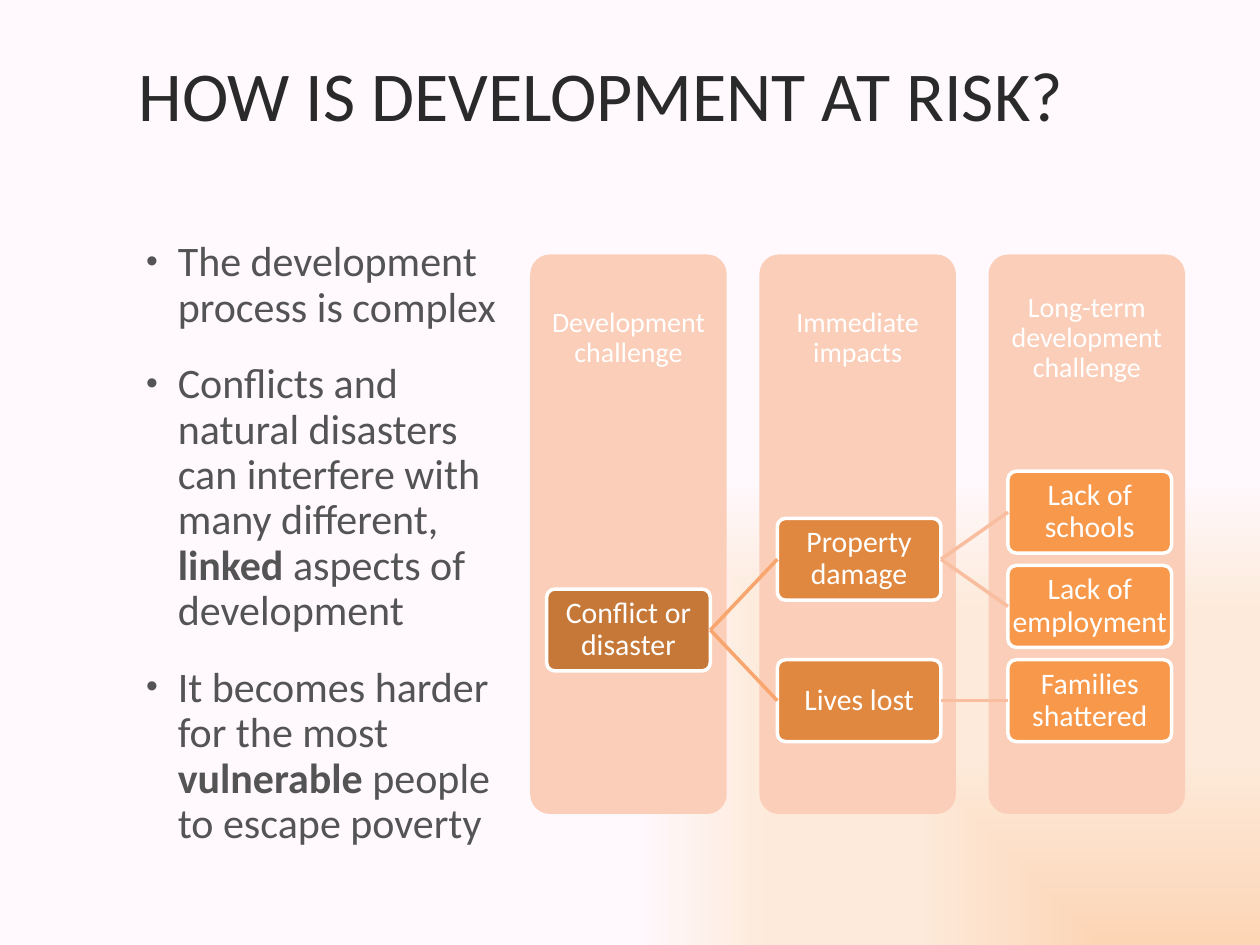
"""Builds the slide on how conflict and disaster put development at risk."""
from dataclasses import dataclass

from pptx import Presentation
from pptx.dml.color import RGBColor
from pptx.enum.shapes import MSO_CONNECTOR, MSO_SHAPE
from pptx.enum.text import MSO_ANCHOR, MSO_AUTO_SIZE, PP_ALIGN
from pptx.oxml import parse_xml
from pptx.oxml.ns import nsdecls
from pptx.util import Cm, Pt


@dataclass(frozen=True)
class Theme:
    font: str = "Calibri"
    title: str = "2A2A2A"
    body: str = "545454"
    white: str = "FFFFFF"
    panel: str = "FBCEB9"
    levels: tuple = ("C67838", "E08840", "F7984B")
    links: tuple = ("F8A56E", "F9BE9F")
    backdrop: tuple = ((0, "FCD5B5", 100), (40, "FDEADA", 100),
                       (70, "FDEADA", 100), (100, "FFF9FE", 83))
    title_size: int = 40
    body_size: int = 24
    stage_size: int = 16
    node_size: int = 17
    line_width: int = 2


THEME = Theme()
STAGES = ("Development challenge", "Immediate impacts",
          "Long-term development challenge")
IMPACT_TREE = ("Conflict or disaster", [
    ("Property damage", [("Lack of schools", []), ("Lack of employment", [])]),
    ("Lives lost", [("Families shattered", [])]),
])
POINTS = (
    (("The development process is complex", False),),
    (("Conflicts and natural disasters can interfere with many different, ", False),
     ("linked", True), (" aspects of development", False)),
    (("It becomes harder for the most ", False), ("vulnerable", True),
     (" people to escape poverty", False)),
)


def rgb(value):
    return RGBColor.from_string(value)


def style_runs(paragraph, size, color):
    paragraph.line_spacing = 0.9
    for run in paragraph.runs:
        run.font.name = THEME.font
        run.font.size = Pt(size)
        run.font.color.rgb = rgb(color)


def place(shape, left, top, width, height):
    shape.left, shape.top = Cm(left), Cm(top)
    shape.width, shape.height = Cm(width), Cm(height)


def paint_background(slide):
    stops = "".join(
        f'<a:gs pos="{position * 1000}"><a:srgbClr val="{color}">'
        f'<a:alpha val="{alpha * 1000}"/></a:srgbClr></a:gs>'
        for position, color, alpha in THEME.backdrop)
    slide.element.cSld.insert(0, parse_xml(
        f'<p:bg {nsdecls("p", "a")}><p:bgPr><a:gradFill rotWithShape="1">'
        f'<a:gsLst>{stops}</a:gsLst><a:path path="rect">'
        '<a:fillToRect l="100000" t="100000"/></a:path></a:gradFill>'
        '<a:effectLst/></p:bgPr></p:bg>'))


def add_title(slide, text):
    title = slide.shapes.title
    place(title, 2.54, 0.76, 21.97, 3.68)
    frame = title.text_frame
    frame.text = text
    frame.auto_size = MSO_AUTO_SIZE.NONE
    frame.vertical_anchor = MSO_ANCHOR.BOTTOM
    frame.margin_bottom = Cm(1.68)
    frame.paragraphs[0].alignment = PP_ALIGN.LEFT
    style_runs(frame.paragraphs[0], THEME.title_size, THEME.title)


def set_bullet(paragraph):
    properties = paragraph._p.get_or_add_pPr()
    properties.set("marL", str(Cm(0.76)))
    properties.set("indent", str(Cm(-0.64)))
    for tag in (f'<a:buClr {nsdecls("a")}><a:srgbClr val="{THEME.body}"/></a:buClr>',
                f'<a:buSzPct {nsdecls("a")} val="80000"/>',
                f'<a:buFont {nsdecls("a")} typeface="Arial"/>',
                f'<a:buChar {nsdecls("a")} char="•"/>'):
        properties.append(parse_xml(tag))


def add_points(slide):
    body = slide.placeholders[1]
    place(body, 2.57, 4.72, 8.13, 13)
    frame = body.text_frame
    frame.auto_size = MSO_AUTO_SIZE.NONE
    for index, parts in enumerate(POINTS):
        paragraph = frame.add_paragraph() if index else frame.paragraphs[0]
        for text, bold in parts:
            run = paragraph.add_run()
            run.text = text
            run.font.bold = bold
        paragraph.space_before = Pt(18)
        style_runs(paragraph, THEME.body_size, THEME.body)
        set_bullet(paragraph)


def add_rounded(slide, left, top, width, height, fill):
    box = slide.shapes.add_shape(MSO_SHAPE.ROUNDED_RECTANGLE, Cm(left), Cm(top),
                                 Cm(width), Cm(height))
    box.adjustments[0] = 0.1
    box.shadow.inherit = False
    box.fill.solid()
    box.fill.fore_color.rgb = rgb(fill)
    box.line.fill.background()
    return box


def center_text(shape, text, size, margin):
    frame = shape.text_frame
    frame.text = text
    frame.word_wrap = True
    frame.vertical_anchor = MSO_ANCHOR.MIDDLE
    frame.margin_left = frame.margin_right = Cm(margin)
    frame.margin_top = frame.margin_bottom = Cm(margin)
    frame.paragraphs[0].alignment = PP_ALIGN.CENTER
    style_runs(frame.paragraphs[0], size, THEME.white)


def add_stage(slide, column, heading):
    left, top, width = 10.69 + 4.62 * column, 5.13, 3.96
    add_rounded(slide, left, top, width, 11.28, THEME.panel)
    label = slide.shapes.add_textbox(Cm(left), Cm(top), Cm(width), Cm(3.38))
    center_text(label, heading, THEME.stage_size, 0.3)


def add_node(slide, text, level, row):
    node = add_rounded(slide, 11.02 + 4.65 * level, 9.5 + 1.9 * row, 3.3, 1.65,
                       THEME.levels[level])
    node.line.color.rgb = rgb(THEME.white)
    node.line.width = Pt(THEME.line_width)
    center_text(node, text, THEME.node_size, 0.02)
    return node


def add_link(slide, cause, effect, color):
    link = slide.shapes.add_connector(MSO_CONNECTOR.STRAIGHT, 0, 0, 0, 0)
    link.begin_connect(cause, 3)
    link.end_connect(effect, 1)
    link.line.color.rgb = rgb(color)
    link.line.width = Pt(THEME.line_width)
    link._element.spPr.append(parse_xml(f'<a:effectLst {nsdecls("a")}/>'))


def add_branch(slide, branch, level=0, first_row=0):
    """Draw a branch centred on its effects; return its node, row and next free row."""
    text, effects = branch
    next_row = first_row
    effect_nodes, effect_rows = [], []
    for effect in effects:
        effect_node, effect_row, next_row = add_branch(slide, effect, level + 1, next_row)
        effect_nodes.append(effect_node)
        effect_rows.append(effect_row)
    row = sum(effect_rows) / len(effect_rows) if effects else first_row
    node = add_node(slide, text, level, row)
    for effect_node in effect_nodes:
        add_link(slide, node, effect_node, THEME.links[level])
    return node, row, max(next_row, first_row + 1)


def main():
    deck = Presentation()
    deck.slide_width, deck.slide_height = Cm(25.4), Cm(19.05)
    slide = deck.slides.add_slide(deck.slide_layouts[1])
    paint_background(slide)
    add_title(slide, "HOW IS DEVELOPMENT AT RISK?")
    add_points(slide)
    for column, heading in enumerate(STAGES):
        add_stage(slide, column, heading)
    add_branch(slide, IMPACT_TREE)
    deck.save("out.pptx")


if __name__ == "__main__":
    main()
